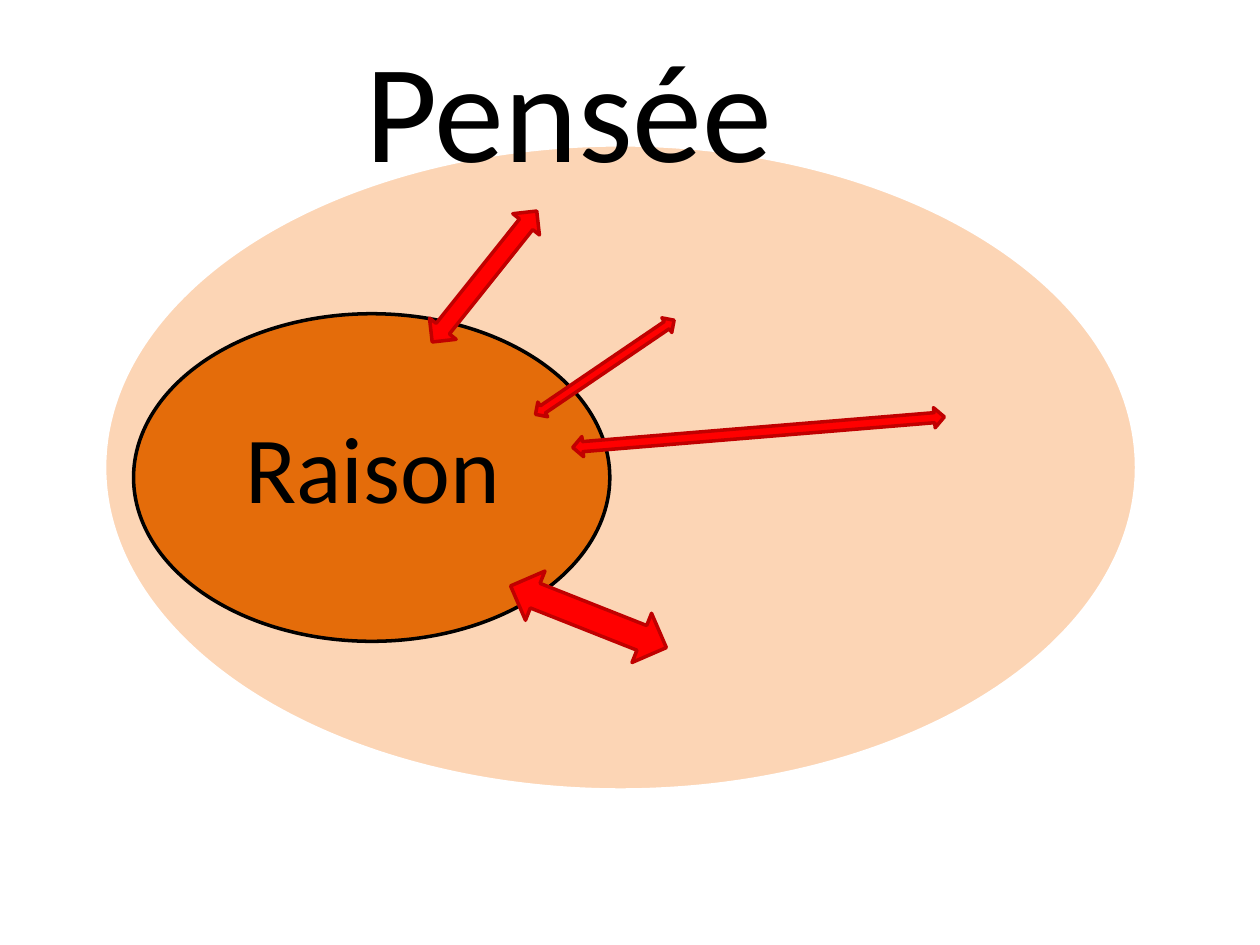
import pptx
import pptx.util
import pptx.dml.color
import pptx.enum.shapes
import pptx.enum.text

Inches = pptx.util.Inches
Pt = pptx.util.Pt
SHAPE = pptx.enum.shapes.MSO_SHAPE
COLORS = {
    "thought": "FCD5B5",
    "reason": "E46C0A",
    "arrow": "FF0000",
    "arrow_edge": "C00000",
    "white": "FFFFFF",
    "black": "000000",
}


def rgb(name):
    return pptx.dml.color.RGBColor.from_string(COLORS[name])


def add_figure(kind, box, fill, edge, rotation=0):
    figure = slide.shapes.add_shape(kind, *map(Inches, box))
    figure.shadow.inherit = False
    figure.fill.solid()
    figure.fill.fore_color.rgb = rgb(fill)
    figure.line.color.rgb = rgb(edge)
    figure.line.width = Pt(2)
    figure.rotation = rotation


deck = pptx.Presentation()
deck.slide_width = Inches(10)
deck.slide_height = Inches(7.5)
slide = deck.slides.add_slide(deck.slide_layouts[5])

add_figure(SHAPE.OVAL, (0.83, 1.15, 8.19, 5.12), "thought", "white")
add_figure(SHAPE.OVAL, (1.06, 2.49, 3.78, 2.6), "reason", "black")

reason = slide.shapes.add_textbox(*map(Inches, (1.85, 3.2, 2.52, 1.01)))
thought = slide.shapes.title
slide.shapes._spTree.append(thought._element)
thought_box = {
    "left": Inches(2.8),
    "top": Inches(0.13),
    "width": Inches(4.49),
    "height": Inches(1.45),
}
for attribute, value in thought_box.items():
    setattr(thought, attribute, value)

frame_format = {
    "word_wrap": True,
    "auto_size": pptx.enum.text.MSO_AUTO_SIZE.SHAPE_TO_FIT_TEXT,
    "vertical_anchor": pptx.enum.text.MSO_ANCHOR.TOP,
}
for label, wording, size in ((reason, "Raison", 54), (thought, "Pensée", 80)):
    frame = label.text_frame
    frame.text = wording
    for attribute, value in frame_format.items():
        setattr(frame, attribute, value)
    paragraph = frame.paragraphs[0]
    paragraph.alignment = pptx.enum.text.PP_ALIGN.LEFT
    for attribute, value in {"name": "Calibri", "size": Pt(size)}.items():
        setattr(paragraph.font, attribute, value)
    paragraph.font.color.rgb = rgb("black")

exchanges = (
    ((3.71, 1.53, 0.27, 1.33), 38.6),
    ((4.73, 2.25, 0.14, 1.33), 55.8),
    ((5.94, 1.95, 0.16, 2.96), 85.3),
    ((4.46, 4.23, 0.42, 1.33), 111.6),
)
for box, rotation in exchanges:
    add_figure(SHAPE.UP_DOWN_ARROW, box, "arrow", "arrow_edge", rotation)

deck.save("out.pptx")
